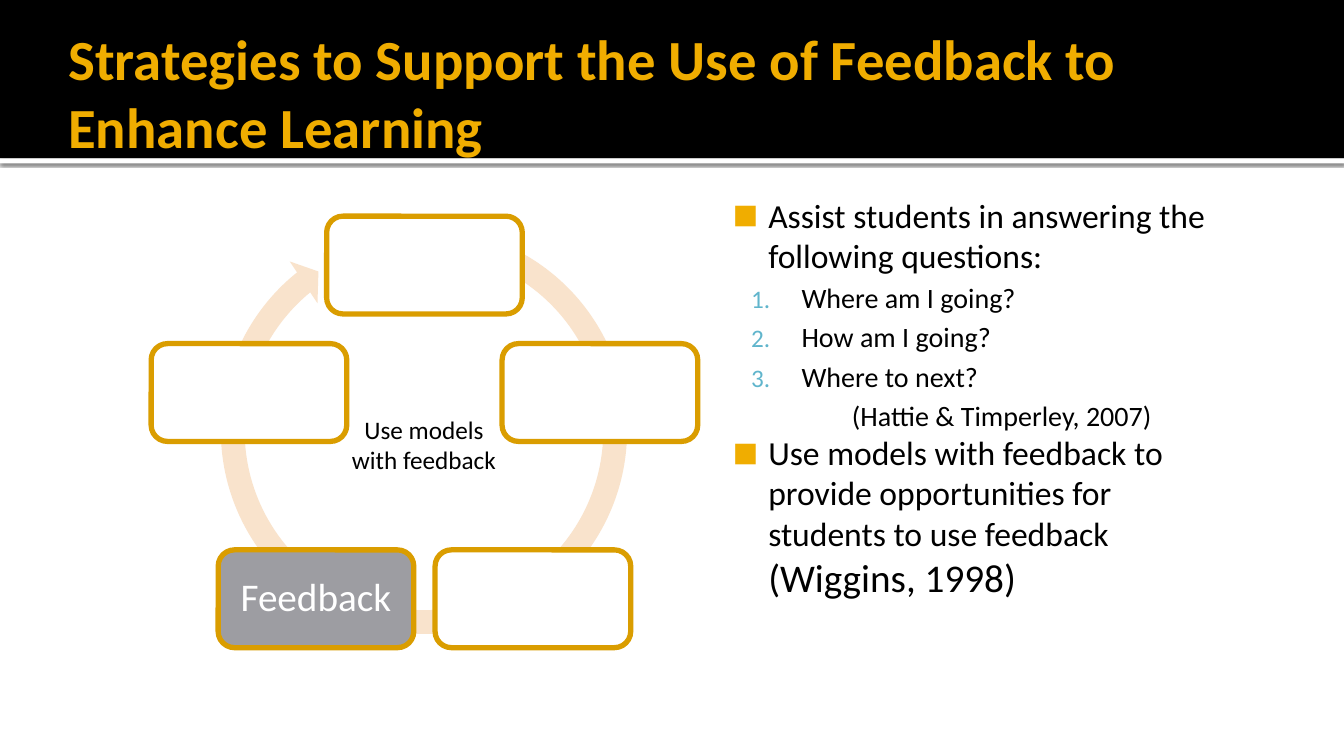
import math
from dataclasses import dataclass

from lxml import etree
from pptx import Presentation
from pptx.dml.color import RGBColor
from pptx.enum.shapes import MSO_SHAPE
from pptx.enum.text import MSO_ANCHOR, PP_ALIGN
from pptx.oxml.ns import qn
from pptx.util import Inches, Pt

RECTANGLE = MSO_SHAPE.RECTANGLE
ROUNDED = MSO_SHAPE.ROUNDED_RECTANGLE
CIRCULAR_ARROW = MSO_SHAPE.CIRCULAR_ARROW
TOP, MIDDLE = MSO_ANCHOR.TOP, MSO_ANCHOR.MIDDLE
LEFT, CENTER = PP_ALIGN.LEFT, PP_ALIGN.CENTER

FONT = "Calibri"
COLORS = {
    "white": "FFFFFF",
    "black": "000000",
    "gold": "F0AD00",
    "dark_gold": "DA9D00",
    "peach": "F9E3CC",
    "gray": "9D9DA2",
    "aqua": "60B5CC",
}

# Feedback cycle geometry, in inches
CYCLE_X, CYCLE_Y, CYCLE_RADIUS = 4.21, 4.46, 1.83
NODE_WIDTH, NODE_HEIGHT = 1.94, 0.97
ARROW_ADJUSTMENTS = (0.055, 3.307, 138.599, 173.35, 0.058)


@dataclass
class Node:
    label: str = ""
    fill: str = "white"


@dataclass
class Bullet:
    tag: str
    attribute: str
    value: str
    color: str
    percent: int


@dataclass
class Point:
    runs: list[tuple[str, float]]
    margin: float
    indent: float = 0
    level: int = 0
    space_before: float = 0
    bullet: Bullet | None = None


SQUARE = Bullet("a:buChar", "char", "■", "gold", 80)
NUMBER = Bullet("a:buAutoNum", "type", "arabicPeriod", "aqua", 90)

NODES = [Node(), Node(), Node(), Node("Feedback", "gray"), Node()]
QUESTIONS = ["Where am I going?", "How am I going?", "Where to next?"]
POINTS = [
    Point([("Assist students in answering the following questions:", 24)], 0.48, -0.35, bullet=SQUARE),
    *[Point([(question, 20)], 0.81, -0.5, 1, 4, NUMBER) for question in QUESTIONS],
    Point([("(Hattie & Timperley, 2007)", 20)], 1.31, level=1, space_before=4),
    Point(
        [
            ("Use models with feedback to provide opportunities for students to use feedback ", 24),
            ("(Wiggins, 1998)", 28),
        ],
        0.48, -0.35, bullet=SQUARE,
    ),
]


def rgb(name: str) -> RGBColor:
    return RGBColor.from_string(COLORS[name])


def add_filled(slide, kind, left: float, top: float, width: float, height: float, fill: str):
    shape = slide.shapes.add_shape(kind, Inches(left), Inches(top), Inches(width), Inches(height))
    shape.shadow.inherit = False
    shape.fill.solid()
    shape.fill.fore_color.rgb = rgb(fill)
    shape.line.fill.background()
    return shape


def add_text_frame(slide, left: float, top: float, width: float, height: float,
                   insets: tuple[float, float, float, float], wrap: bool = True):
    box = slide.shapes.add_textbox(Inches(left), Inches(top), Inches(width), Inches(height))
    frame = box.text_frame
    frame.word_wrap = wrap
    frame.vertical_anchor = TOP
    frame.margin_left, frame.margin_top, frame.margin_right, frame.margin_bottom = map(Inches, insets)
    return frame


def format_runs(frame, size: float, color: str, alignment=LEFT, bold: bool = False) -> None:
    for paragraph in frame.paragraphs:
        paragraph.alignment = alignment
        for run in paragraph.runs:
            run.font.name = FONT
            run.font.size = Pt(size)
            run.font.bold = bold
            run.font.color.rgb = rgb(color)


def add_shadow(shape) -> None:
    effects = shape._element.spPr.find(qn("a:effectLst"))
    shadow = etree.SubElement(effects, qn("a:outerShdw"), blurRad=str(Pt(2.5)), dist=str(Pt(0.8)),
                              dir="5400000", algn="tl", rotWithShape="0")
    color = etree.SubElement(shadow, qn("a:srgbClr"), val=COLORS["black"])
    etree.SubElement(color, qn("a:alpha"), val="60000")


def add_bullet(properties, bullet: Bullet) -> None:
    color = etree.SubElement(properties, qn("a:buClr"))
    etree.SubElement(color, qn("a:srgbClr"), val=COLORS[bullet.color])
    etree.SubElement(properties, qn("a:buSzPct"), val=str(bullet.percent * 1000))
    etree.SubElement(properties, qn("a:buFont"), typeface=FONT)
    etree.SubElement(properties, qn(bullet.tag), {bullet.attribute: bullet.value})


def add_header(slide) -> None:
    strip = add_filled(slide, RECTANGLE, 0, 1.57, 13.33, 0.05, "white")
    add_shadow(strip)
    add_filled(slide, RECTANGLE, 0, 0, 13.33, 1.57, "black")
    frame = add_text_frame(slide, 0.58, 0.13, 12.17, 1.44, (0.1, 0.11, 0.05, 0))
    frame.text = "Strategies to Support the Use of Feedback to Enhance Learning"
    format_runs(frame, 40.5, "gold", bold=True)


def add_cycle(slide) -> None:
    caption = add_text_frame(slide, 3.37, 4.06, 1.67, 0.71, (0.1, 0.05, 0.1, 0.05), wrap=False)
    caption.text = "Use models\nwith feedback"
    format_runs(caption, 18, "black", CENTER)

    arrow = add_filled(slide, CIRCULAR_ARROW, 2.06, 2.13, 4.29, 4.29, "peach")
    for index, value in enumerate(ARROW_ADJUSTMENTS):
        arrow.adjustments[index] = value

    # Nodes stand clockwise on a regular polygon, starting at the top
    for index, node in enumerate(NODES):
        angle = index * math.tau / len(NODES)
        left = CYCLE_X + CYCLE_RADIUS * math.sin(angle) - NODE_WIDTH / 2
        top = CYCLE_Y - CYCLE_RADIUS * math.cos(angle) - NODE_HEIGHT / 2
        shape = add_filled(slide, ROUNDED, left, top, NODE_WIDTH, NODE_HEIGHT, node.fill)
        shape.line.color.rgb = rgb("dark_gold")
        shape.line.width = Pt(3.78)
        if node.label:
            shape.text_frame.text = node.label
            shape.text_frame.vertical_anchor = MIDDLE
            shape.text_frame.paragraphs[0].line_spacing = 0.9
            format_runs(shape.text_frame, 28, "white", CENTER)


def add_points(slide) -> None:
    frame = add_text_frame(slide, 7.08, 1.83, 5.08, 4.75, (0.06, 0.1, 0.1, 0.05))
    for index, point in enumerate(POINTS):
        paragraph = frame.add_paragraph() if index else frame.paragraphs[0]
        paragraph.level = point.level
        paragraph.space_before = Pt(point.space_before)
        for text, size in point.runs:
            run = paragraph.add_run()
            run.text = text
            run.font.name = FONT
            run.font.size = Pt(size)
            run.font.color.rgb = rgb("black")
        properties = paragraph._p.get_or_add_pPr()
        properties.set("marL", str(Inches(point.margin)))
        properties.set("indent", str(Inches(point.indent)))
        if point.bullet:
            add_bullet(properties, point.bullet)


def main() -> None:
    presentation = Presentation()
    presentation.slide_width = Inches(13.33)
    presentation.slide_height = Inches(7.5)
    slide = presentation.slides.add_slide(presentation.slide_layouts[6])
    add_header(slide)
    add_cycle(slide)
    add_points(slide)
    presentation.save("out.pptx")


if __name__ == "__main__":
    main()
